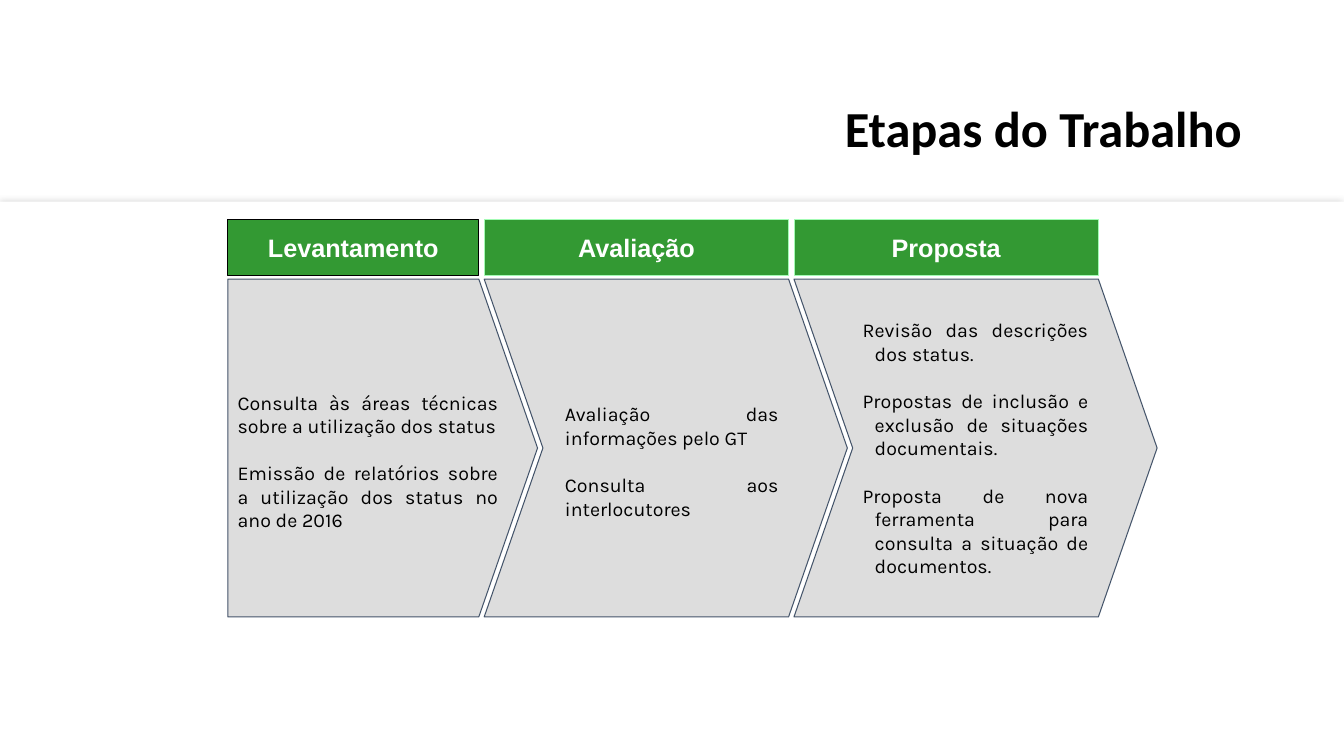
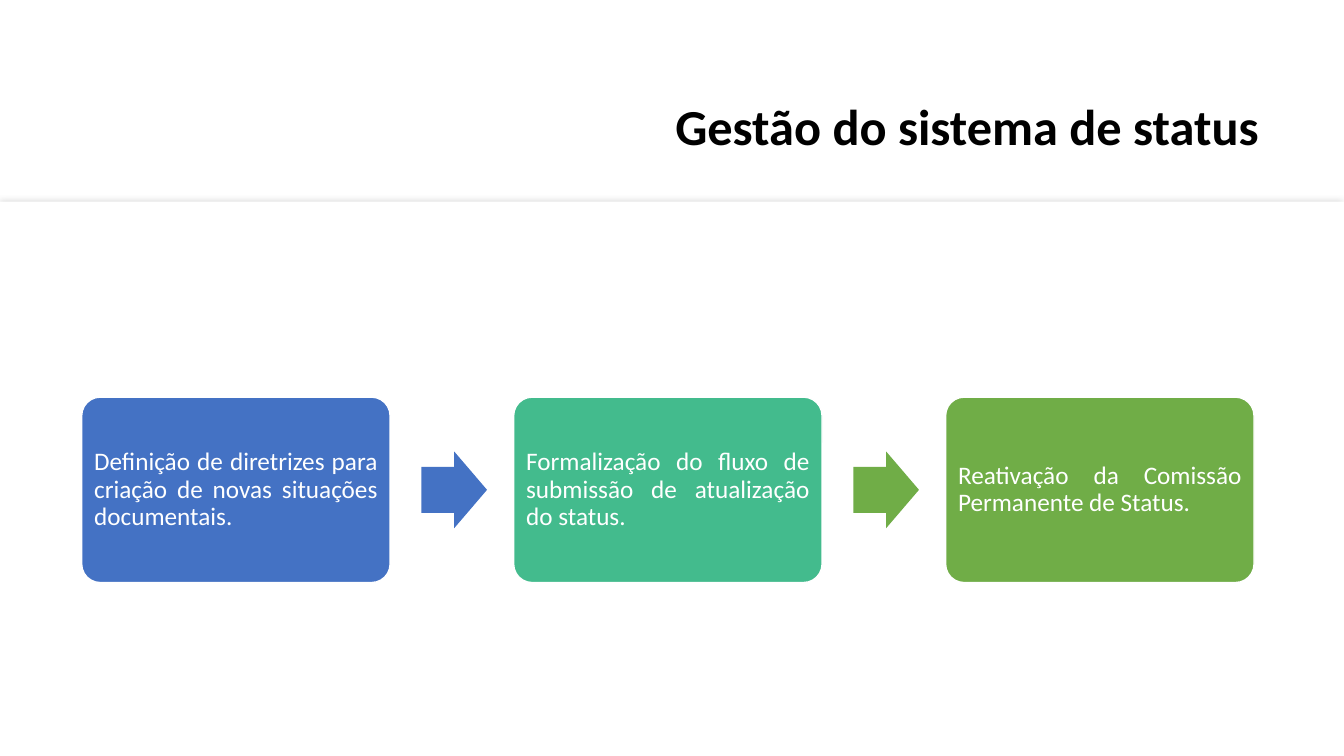
from lxml import etree
from pptx import Presentation
from pptx.dml.color import RGBColor
from pptx.enum.shapes import MSO_SHAPE
from pptx.enum.text import MSO_ANCHOR, MSO_AUTO_SIZE, PP_ALIGN
from pptx.oxml.ns import qn
from pptx.util import Inches, Pt

COLORS = {
    "white": "FFFFFF", "black": "000000", "shadow": "A6A6A6",
    "header": "339933", "header_edge": "A3FBB4",
    "body": "DDDDDD", "body_edge": "44546A",
    "blue": "4472C4", "teal": "43BB8D", "green": "70AD47",
}


def rgb(color):
    return RGBColor.from_string(COLORS[color])


def write(frame, *texts, size=14, font="Calibri", color="black", bold=False,
          align=PP_ALIGN.JUSTIFY, leading=None, gap=0, hanging=0, indent=0,
          insets=(0.1, 0.05, 0.1, 0.05)):
    """Fill a text frame, one paragraph per text; lengths in inches, gap in points."""
    frame.word_wrap = True
    frame.auto_size = MSO_AUTO_SIZE.NONE
    frame.vertical_anchor = MSO_ANCHOR.MIDDLE
    (frame.margin_left, frame.margin_top,
     frame.margin_right, frame.margin_bottom) = map(Inches, insets)
    for index, text in enumerate(texts):
        paragraph = frame.add_paragraph() if index else frame.paragraphs[0]
        paragraph.alignment = align
        paragraph.space_before = Pt(gap if index else 0)
        if leading:
            paragraph.line_spacing = leading
        if indent or hanging:
            properties = paragraph._p.get_or_add_pPr()
            properties.set("marL", str(Inches(indent)))
            properties.set("indent", str(-Inches(hanging)))
        run = paragraph.add_run()
        run.text = text
        run.font.size, run.font.name, run.font.bold = Pt(size), font, bold
        run.font.color.rgb = rgb(color)


class Deck:
    """Shared style and the current slide; places are percentages of the slide."""

    def __init__(self):
        self.presentation = Presentation()
        self.presentation.slide_width = Inches(13.33)
        self.presentation.slide_height = Inches(7.5)
        self.slide = None

    def place(self, left, top, width, height):
        across = self.presentation.slide_width / 100
        down = self.presentation.slide_height / 100
        return (round(left * across), round(top * down),
                round(width * across), round(height * down))

    def start(self, title, box):
        self.slide = self.presentation.slides.add_slide(
            self.presentation.slide_layouts[5])
        heading = self.slide.shapes.title
        heading.left, heading.top, heading.width, heading.height = self.place(*box)
        write(heading.text_frame, title, size=36, bold=True,
              align=PP_ALIGN.RIGHT, leading=0.9)
        self.content_panel()

    def content_panel(self):
        panel = self.shape(MSO_SHAPE.RECTANGLE, (0, 26.67, 100, 73.33), "white")
        effects = panel._element.spPr.find(qn("a:effectLst"))
        shadow = etree.SubElement(effects, qn("a:outerShdw"),
                                  blurRad=str(Pt(5)), dist="0", dir="0")
        tint = etree.SubElement(shadow, qn("a:srgbClr"), val=COLORS["shadow"])
        etree.SubElement(tint, qn("a:alpha"), val="42000")

    def shape(self, kind, box, fill, edge=None, edge_width=0.75, adjust=()):
        shape = self.slide.shapes.add_shape(kind, *self.place(*box))
        shape.shadow.inherit = False
        shape.fill.solid()
        shape.fill.fore_color.rgb = rgb(fill)
        if edge:
            shape.line.color.rgb = rgb(edge)
            shape.line.width = Pt(edge_width)
        else:
            shape.line.fill.background()
        for index, value in enumerate(adjust):
            shape.adjustments[index] = value
        return shape

    def stage(self, kind, left, width, header, texts, edge, **text_format):
        """A header bar over a pointed block whose tip reaches past the bar."""
        tip = 4.37
        block = self.shape(kind, (left, 36.93, width + tip, 44.67),
                           "body", "body_edge")
        tip_length = self.place(0, 0, tip, 0)[2]
        block.adjustments[0] = tip_length / min(block.width, block.height)
        write(block.text_frame, *texts, font="Karla", gap=17, **text_format)
        bar = self.shape(MSO_SHAPE.RECTANGLE, (left, 29.07, width, 7.33),
                         "header", edge)
        write(bar.text_frame, header, size=18, font="Arial", color="white",
              bold=True, align=PP_ALIGN.CENTER)

    def card(self, box, text, fill):
        card = self.shape(MSO_SHAPE.ROUNDED_RECTANGLE, box, fill, "white", 1, (0.1,))
        write(card.text_frame, text, size=18, color="white", leading=0.9,
              insets=(0.07,) * 4)

    def arrow(self, box, fill):
        self.shape(MSO_SHAPE.RIGHT_ARROW, box, fill, adjust=(0.6, 0.5))


def work_stages(deck):
    deck.start("Etapas do Trabalho", (6.9, 8.53, 86.27, 17.6))
    lowered = (0.1, 0.31, 0.1, 0.05)
    stages = [
        (MSO_SHAPE.PENTAGON, 18.68, "Levantamento",
         ["Consulta às áreas técnicas sobre a utilização dos status",
          "Emissão de relatórios sobre a utilização dos status no ano de 2016"],
         "black", {"insets": lowered}),
        (MSO_SHAPE.CHEVRON, 22.65, "Avaliação",
         ["Avaliação das informações pelo GT", "Consulta aos interlocutores"],
         "header_edge", {"insets": lowered, "indent": 0.12}),
        (MSO_SHAPE.CHEVRON, 22.65, "Proposta",
         ["Revisão das descrições dos status.",
          "Propostas de inclusão e exclusão de situações documentais.",
          "Proposta de nova ferramenta para consulta a situação de documentos."],
         "header_edge", {"indent": 0.12, "hanging": 0.12}),
    ]
    left, gap = 16.95, 0.4
    for kind, width, header, texts, edge, text_format in stages:
        deck.stage(kind, left, width, header, texts, edge, **text_format)
        left += width + gap


def status_management(deck):
    deck.start("Gestão do sistema de status", (26.93, 8.8, 67.51, 16.67))
    # Each card with the colour of the arrow that follows it
    steps = [
        ("Definição de diretrizes para criação de novas situações documentais.",
         "blue", "blue"),
        ("Formalização do fluxo de submissão de atualização do status.",
         "teal", "green"),
        ("Reativação da Comissão Permanente de Status.", "green", None),
    ]
    top, width, height = 52.53, 22.95, 24.53
    arrow_width, arrow_height = 4.88, 10.13
    for index, (text, fill, arrow_fill) in enumerate(steps):
        left = 6.08 + index * 32.14
        deck.card((left, top, width, height), text, fill)
        if arrow_fill:
            deck.arrow((left + 25.28, top + (height - arrow_height) / 2,
                        arrow_width, arrow_height), arrow_fill)


def main():
    deck = Deck()
    work_stages(deck)
    status_management(deck)
    deck.presentation.save("out.pptx")


if __name__ == "__main__":
    main()
